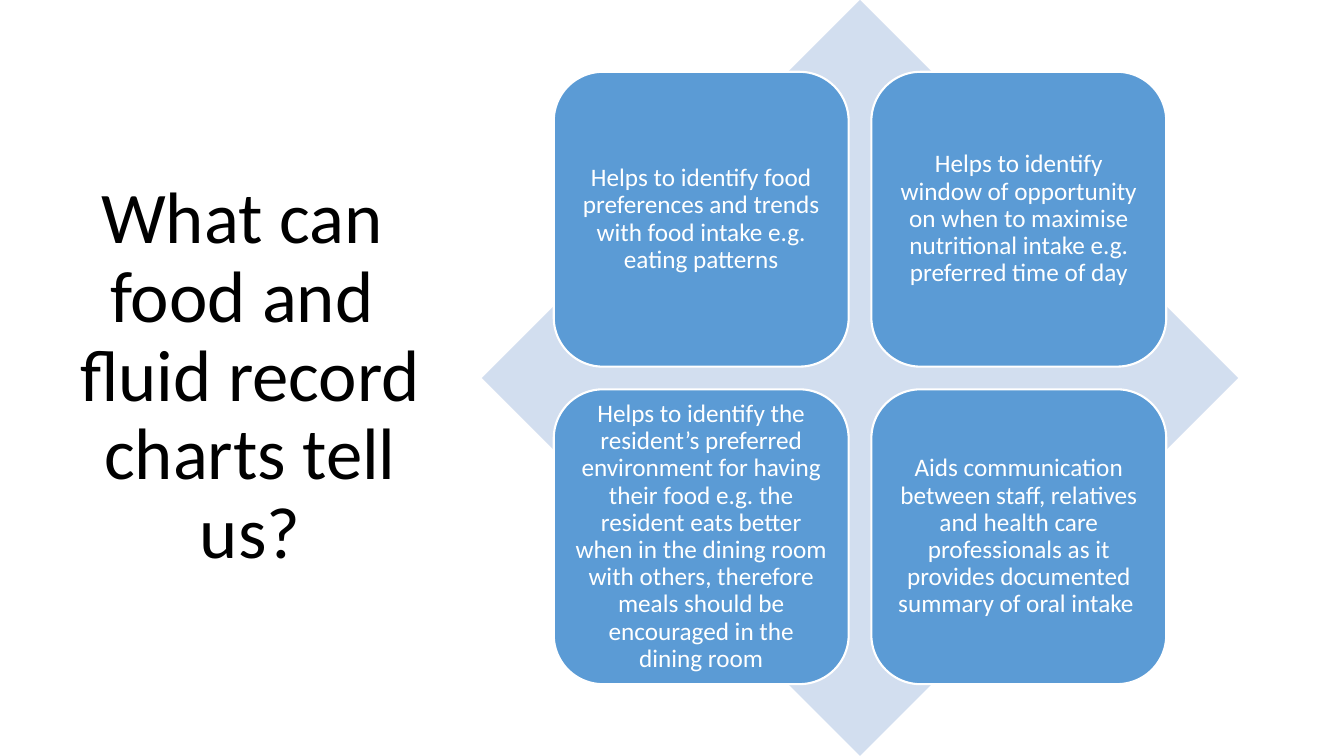
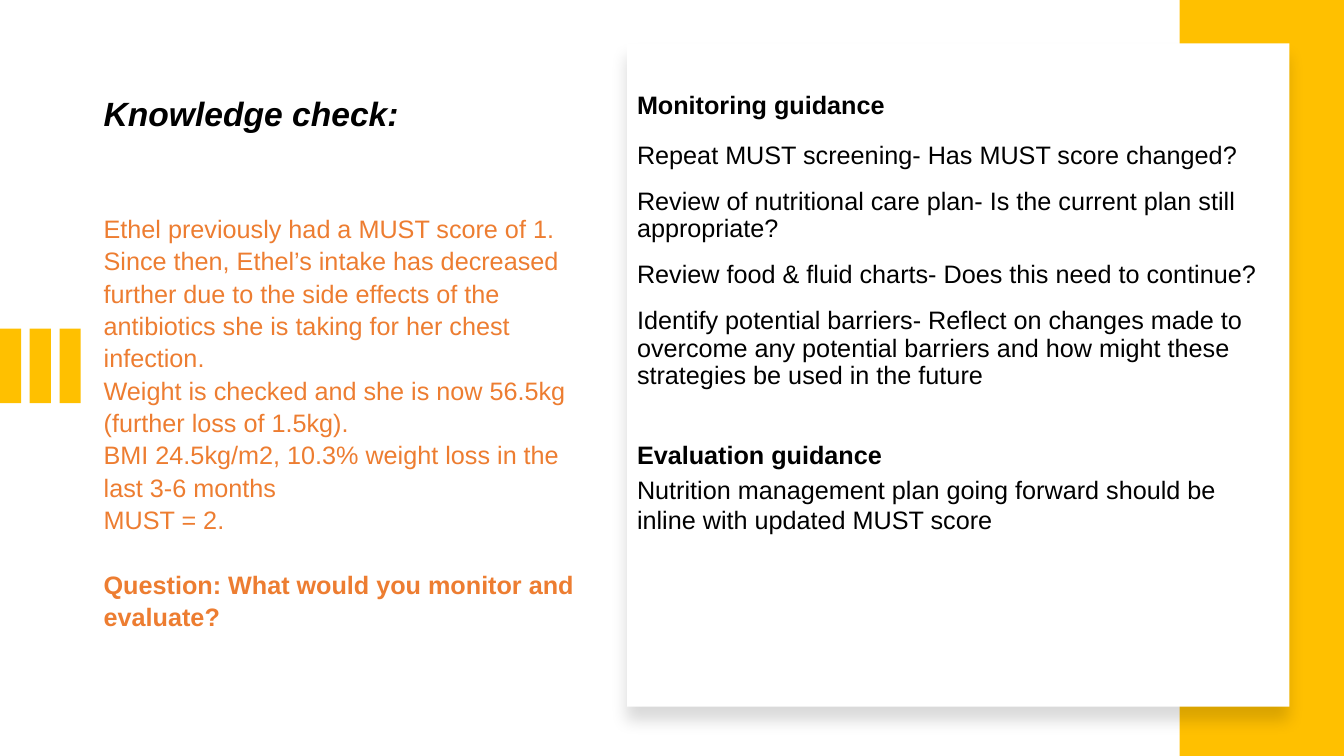
from dataclasses import dataclass
from itertools import product

from lxml import etree
from pptx import Presentation
from pptx import util as u
from pptx.dml.color import RGBColor
from pptx.enum import shapes, text
from pptx.oxml import ns

BLACK = RGBColor(0x00, 0x00, 0x00)
WHITE = RGBColor(0xFF, 0xFF, 0xFF)
BLUE = RGBColor(0x5B, 0x9B, 0xD5)
PALE_BLUE = RGBColor(0xD2, 0xDE, 0xEF)
ORANGE = RGBColor(0xED, 0x7D, 0x31)
GOLD = RGBColor(0xFF, 0xC0, 0x00)

WIDTH, HEIGHT = 13.33, 7.5
CENTER = text.PP_ALIGN.CENTER
LEFT = text.PP_ALIGN.LEFT
SHAPE = shapes.MSO_SHAPE


@dataclass(frozen=True)
class Box:
    left: float
    top: float
    width: float
    height: float

    def emu(self) -> list:
        return [u.Inches(v) for v in (self.left, self.top, self.width, self.height)]


@dataclass(frozen=True)
class Style:
    size: float
    font: str
    color: RGBColor
    bold: bool = False
    italic: bool = False


@dataclass(frozen=True)
class Para:
    text: str
    style: Style
    spacing: float = 1.0
    before: float = 0
    after: float = 0
    align: text.PP_ALIGN = LEFT


TITLE = Style(52, "Calibri", BLACK)
CARD = Style(18, "Calibri", WHITE)
HEADING = Style(24, "Arial", BLACK, bold=True, italic=True)
CASE = Style(18, "Arial", ORANGE)
QUESTION = Style(18, "Arial", ORANGE, bold=True)
BODY = Style(18, "Arial", BLACK)
BODY_BOLD = Style(18, "Arial", BLACK, bold=True)

CARD_TEXTS = [
    "Helps to identify food preferences and trends with food intake e.g. eating patterns",
    "Helps to identify window of opportunity on when to maximise nutritional intake "
    "e.g. preferred time of day",
    "Helps to identify the resident’s preferred environment for having their food e.g. "
    "the resident eats better when in the dining room with others, therefore meals "
    "should be encouraged in the dining room",
    "Aids communication between staff, relatives and health care professionals as it "
    "provides documented summary of oral intake ",
]

CASE_LINES = [
    "Ethel previously had a MUST score of 1.",
    "Since then, Ethel’s intake has decreased further due to the side effects of the "
    "antibiotics she is taking for her chest infection.",
    "Weight is checked and she is now 56.5kg (further loss of 1.5kg).",
    "BMI 24.5kg/m2, 10.3% weight loss in the last 3-6 months",
    "MUST = 2.",
]

REVIEW_LINES = [
    "Review of nutritional care plan- Is the current plan still appropriate?",
    "Review food & fluid charts- Does this need to continue?",
    "Identify potential barriers- Reflect on changes made to overcome any potential "
    "barriers and how might these strategies be used in the future",
]


def write(tf, paras: list[Para], anchor=text.MSO_ANCHOR.TOP) -> None:
    tf.word_wrap = True
    tf.vertical_anchor = anchor
    for i, para in enumerate(paras):
        p = tf.paragraphs[0] if i == 0 else tf.add_paragraph()
        p.alignment = para.align
        p.line_spacing = para.spacing
        p.space_before = u.Pt(para.before)
        p.space_after = u.Pt(para.after)
        for j, line in enumerate(para.text.split("\n")):
            if j:
                p.add_line_break()
            r = p.add_run()
            r.text = line
            f = r.font
            f.name, f.size = para.style.font, u.Pt(para.style.size)
            f.bold, f.italic = para.style.bold, para.style.italic
            f.color.rgb = para.style.color


def add_text(s, box: Box, paras: list[Para], anchor=text.MSO_ANCHOR.TOP) -> None:
    write(s.shapes.add_textbox(*box.emu()).text_frame, paras, anchor)


def add_filled(s, kind: shapes.MSO_SHAPE, box: Box, fill: RGBColor):
    sp = s.shapes.add_shape(kind, *box.emu())
    sp.shadow.inherit = False
    sp.fill.solid()
    sp.fill.fore_color.rgb = fill
    sp.line.fill.background()
    return sp


def add_soft_shadow(sp) -> None:
    effects = sp._element.spPr.find(ns.qn("a:effectLst"))
    shadow = etree.SubElement(
        effects, ns.qn("a:outerShdw"), blurRad=str(u.Pt(11)), dist=str(u.Pt(10)),
        dir="5400000", algn="t", rotWithShape="0",
    )
    color = etree.SubElement(shadow, ns.qn("a:srgbClr"), val=str(BLACK))
    etree.SubElement(color, ns.qn("a:alpha"), val="15000")


def build_chart_uses(s) -> None:
    add_text(
        s, Box(0.66, 0.7, 3.64, 6.09),
        [Para("What can \nfood and \nfluid record charts tell us?", TITLE, 0.9, align=CENTER)],
        text.MSO_ANCHOR.MIDDLE,
    )
    left, side = 4.78, HEIGHT
    add_filled(s, SHAPE.DIAMOND, Box(left, 0, side, side), PALE_BLUE)
    margin, size, pitch = 0.095 * side, 0.39 * side, 0.42 * side
    for (row, col), words in zip(product(range(2), repeat=2), CARD_TEXTS):
        box = Box(left + margin + col * pitch, margin + row * pitch, size, size)
        sp = add_filled(s, SHAPE.ROUNDED_RECTANGLE, box, BLUE)
        sp.line.color.rgb = WHITE
        sp.line.width = u.Pt(1.5)
        tf = sp.text_frame
        tf.margin_left = tf.margin_right = tf.margin_top = tf.margin_bottom = u.Inches(0.07)
        write(tf, [Para(words, CARD, 0.9, align=CENTER)], text.MSO_ANCHOR.MIDDLE)


def build_knowledge_check(s) -> None:
    case = [Para(line, CASE, 1.07) for line in CASE_LINES]
    question = Para("Question: What would you monitor and evaluate?", QUESTION, 1.07, before=23)
    add_text(
        s, Box(0.93, 0.84, 5.15, 5.42),
        [Para("Knowledge check:", HEADING, 1.07, after=56), *case, question],
    )
    for i in range(3):
        add_filled(s, SHAPE.RECTANGLE, Box(i * 0.295, 3.26, 0.21, 0.74), GOLD)
    band = 1.63
    add_filled(s, SHAPE.RECTANGLE, Box(WIDTH - band, 0, band, HEIGHT), GOLD)
    panel = add_filled(s, SHAPE.RECTANGLE, Box(6.22, 0.43, 6.57, 6.58), WHITE)
    add_soft_shadow(panel)
    before, after = 10, 3.6
    add_text(s, Box(6.22, 0.84, 6.57, 5.71), [
        Para("Monitoring guidance", BODY_BOLD, after=after),
        Para("Repeat MUST screening- Has MUST score changed?", BODY, 1.0, before, after),
        *(Para(line, BODY, 0.9, before, after) for line in REVIEW_LINES),
        Para("Evaluation guidance", BODY_BOLD, 2.0, before, after),
        Para("Nutrition management plan going forward should be inline with updated MUST score",
             BODY, after=after),
    ])


def main() -> None:
    prs = Presentation()
    prs.slide_width, prs.slide_height = u.Inches(WIDTH), u.Inches(HEIGHT)
    for build in (build_chart_uses, build_knowledge_check):
        build(prs.slides.add_slide(prs.slide_layouts[6]))
    prs.save("out.pptx")


if __name__ == "__main__":
    main()
